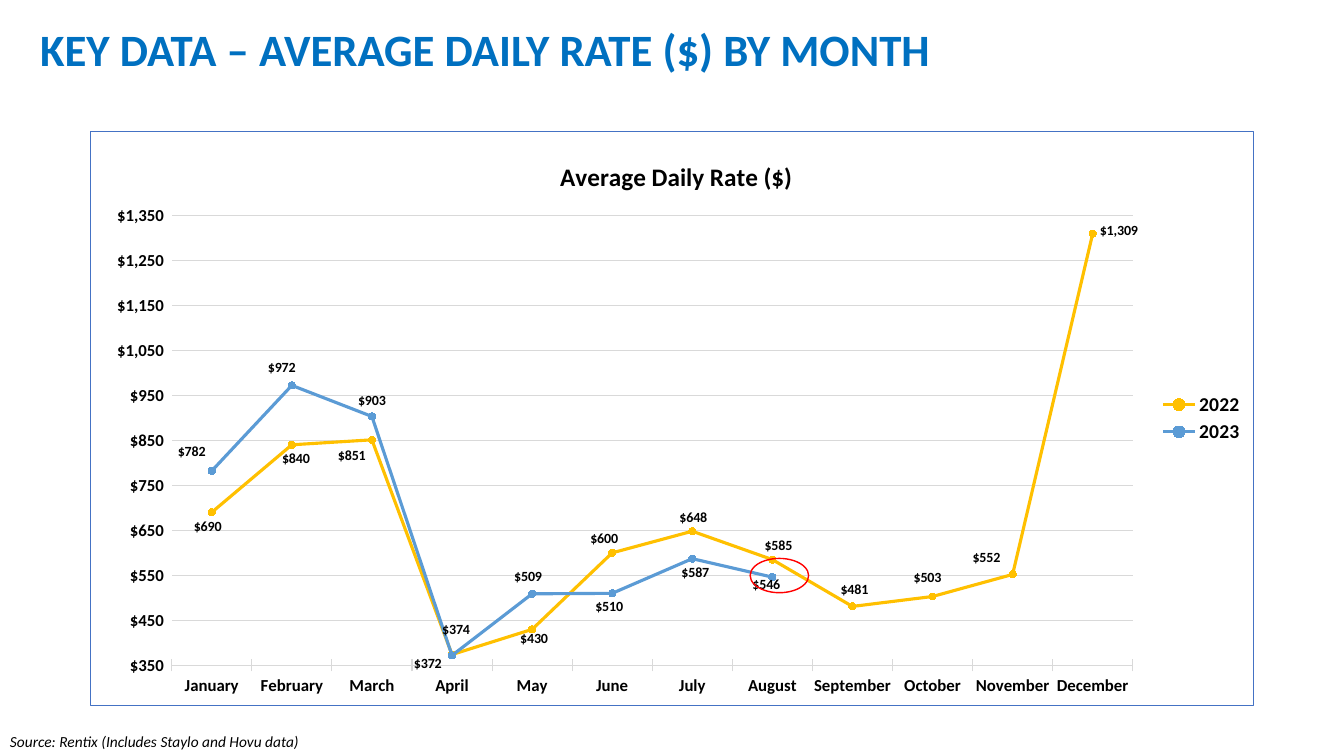
from lxml import etree
from pptx import Presentation
from pptx.chart.data import CategoryChartData
from pptx.dml.color import RGBColor
from pptx.enum import chart as ch, shapes
from pptx.oxml import parse_xml
from pptx.oxml.ns import nsdecls, qn
from pptx.util import Inches, Pt

FONT = "Calibri"
BLACK, GREY = "000000", "D9D9D9"
DOLLARS = r'_("$"* #,##0_);_("$"* \(#,##0\);_("$"* "-"??_);_(@_)'
CHART_W, CHART_H = 11.55, 5.7
LABEL_RISE = 0.15
MONTHS = ["January", "February", "March", "April", "May", "June", "July",
          "August", "September", "October", "November", "December"]
RATES = {
    "2022": [690, 840, 851, 374, 430, 600, 648, 585, 481, 503, 552, 1309],
    "2023": [782, 972, 903, 372, 509, 510, 587, 546] + [None] * 4,
}
COLORS = {"2022": "FFC000", "2023": "5B9BD5"}
LABEL_OFFSETS = {
    "2022": [(-0.04, 0.15), (0.04, 0.14), (-0.2, 0.16), (0.04, -0.24),
             (0.02, 0.1), (-0.08, -0.14), (0.01, -0.13), (0.06, -0.14),
             (0.02, -0.16), (-0.05, -0.18), (-0.26, -0.16), (0.26, -0.03)],
    "2023": [(-0.2, -0.19), (-0.1, -0.17), (0, -0.15), (-0.24, 0.08),
             (-0.04, -0.17), (-0.03, 0.14), (0.03, 0.14), (-0.06, 0.08)],
}


def rgb(value):
    """Turn a hex string into a colour."""
    return RGBColor.from_string(value)


def set_font(font, size, color=BLACK, bold=False, italic=False):
    """Set typeface, size, colour and style of a font."""
    font.name, font.size = FONT, Pt(size)
    font.bold, font.italic = bold, italic
    font.color.rgb = rgb(color)


def set_line(line, color, width):
    """Set colour and width of a line."""
    line.color.rgb = rgb(color)
    line.width = Pt(width)


def set_layout(parent, index, edge=True, inner=False, **sizes):
    """Give a chart part a manual layout in fractions of the chart."""
    for old in parent.findall(qn("c:layout")):
        parent.remove(old)
    layout = parse_xml(f"<c:layout {nsdecls('c')}><c:manualLayout/></c:layout>")
    values = {"layoutTarget": "inner"} if inner else {}
    if edge:
        values.update(xMode="edge", yMode="edge")
    values.update(sizes)
    for tag, value in values.items():
        etree.SubElement(layout[0], qn(f"c:{tag}")).set("val", str(value))
    parent.insert(index, layout)


def add_text(slide, box, words, size, color=BLACK, bold=False, italic=False,
             top=0.05, spacing=1.0):
    """Add a one-paragraph text box."""
    tf = slide.shapes.add_textbox(*map(Inches, box)).text_frame
    tf.word_wrap = True
    tf.margin_top = Inches(top)
    p = tf.paragraphs[0]
    p.text, p.line_spacing = words, spacing
    set_font(p.font, size, color, bold, italic)


def add_ring(slide, box, color):
    """Add an unfilled ellipse."""
    sp = slide.shapes.add_shape(shapes.MSO_SHAPE.OVAL, *map(Inches, box))
    sp.shadow.inherit = False
    sp.fill.background()
    set_line(sp.line, color, 1)


def style_axes(chart):
    """Style the month and dollar axes."""
    months, dollars = chart.category_axis, chart.value_axis
    for axis in (months, dollars):
        set_font(axis.tick_labels.font, 12, bold=True)
    months.major_tick_mark = ch.XL_TICK_MARK.CROSS
    set_line(months.format.line, GREY, 0.75)
    dollars.major_tick_mark = ch.XL_TICK_MARK.NONE
    dollars.minimum_scale, dollars.maximum_scale = 350, 1350
    dollars.major_unit = 100
    dollars.format.line.fill.background()
    set_line(dollars.major_gridlines.format.line, GREY, 0.75)
    dollars.tick_labels.number_format = DOLLARS
    dollars.tick_labels.number_format_is_linked = False


def style_series(series):
    """Colour a year's line and place its value labels."""
    color = COLORS[series.name]
    series.smooth = False
    set_line(series.format.line, color, 2.25)
    marker = series.marker
    marker.style, marker.size = ch.XL_MARKER_STYLE.CIRCLE, 5
    marker.format.fill.solid()
    marker.format.fill.fore_color.rgb = rgb(color)
    set_line(marker.format.line, color, 0.75)
    labels = series.data_labels
    labels.show_value = True
    labels.position = ch.XL_LABEL_POSITION.ABOVE
    labels.number_format, labels.number_format_is_linked = DOLLARS, False
    set_font(labels.font, 10, bold=True)
    for i, (dx, dy) in enumerate(LABEL_OFFSETS[series.name]):
        label = series.points[i].data_label
        label.position = ch.XL_LABEL_POSITION.ABOVE
        set_font(label.font, 10, bold=True)
    dlbls = series.data_labels._element
    for leader in dlbls.findall(qn("c:showLeaderLines")):
        leader.set("val", "0")
    for dlbl, (dx, dy) in zip(dlbls.findall(qn("c:dLbl")),
                              LABEL_OFFSETS[series.name]):
        set_layout(dlbl, 1, edge=False, x=round(dx / CHART_W, 4),
                   y=round((dy + LABEL_RISE) / CHART_H, 4))


def add_rate_chart(slide):
    """Add the line chart of daily rates for both years."""
    data = CategoryChartData(number_format=DOLLARS)
    data.categories = MONTHS
    for year, rates in RATES.items():
        data.add_series(year, rates)
    box = map(Inches, (0.89, 1.3, CHART_W, CHART_H))
    chart = slide.shapes.add_chart(ch.XL_CHART_TYPE.LINE_MARKERS, *box,
                                   data).chart
    set_font(chart.font, 10)
    chart.plots[0].vary_by_categories = False
    p = chart.chart_title.text_frame.paragraphs[0]
    p.text = "Average Daily Rate ($)"
    set_font(p.font, 18, bold=True)
    chart.has_legend = True
    chart.legend.position = ch.XL_LEGEND_POSITION.RIGHT
    chart.legend.include_in_layout = False
    set_font(chart.legend.font, 14, bold=True)
    style_axes(chart)
    for series in chart.plots[0].series:
        style_series(series)
    body = chart.element.find(qn("c:chart"))
    set_layout(body.find(qn("c:title")), 1, x=0.4, y=0.04)
    set_layout(body.find(qn("c:legend")), 1, x=0.92, y=0.45, w=0.07, h=0.1)
    set_layout(body.find(qn("c:plotArea")), 0, inner=True,
               x=0.07, y=0.146, w=0.826, h=0.785)
    body.addnext(parse_xml(
        f'<c:spPr {nsdecls("c", "a")}><a:noFill/><a:ln w="{Pt(0.75)}">'
        '<a:solidFill><a:srgbClr val="4472C4"/></a:solidFill></a:ln></c:spPr>'))


def main():
    """Build the slide and save it."""
    prs = Presentation()
    prs.slide_width, prs.slide_height = Inches(13.33), Inches(7.5)
    slide = prs.slides.add_slide(prs.slide_layouts[6])
    add_text(slide, (0.3, 0.28, 10, 0.86),
             "KEY DATA – AVERAGE DAILY RATE ($) BY MONTH", 32, "0070C0",
             bold=True, top=0, spacing=0.9)
    add_text(slide, (0, 7.21, 3.72, 0.29),
             "Source: Rentix (Includes Staylo and Hovu data)", 11, italic=True)
    add_rate_chart(slide)
    add_ring(slide, (7.44, 5.54, 0.58, 0.34), "FF0000")
    prs.save("out.pptx")


if __name__ == "__main__":
    main()
